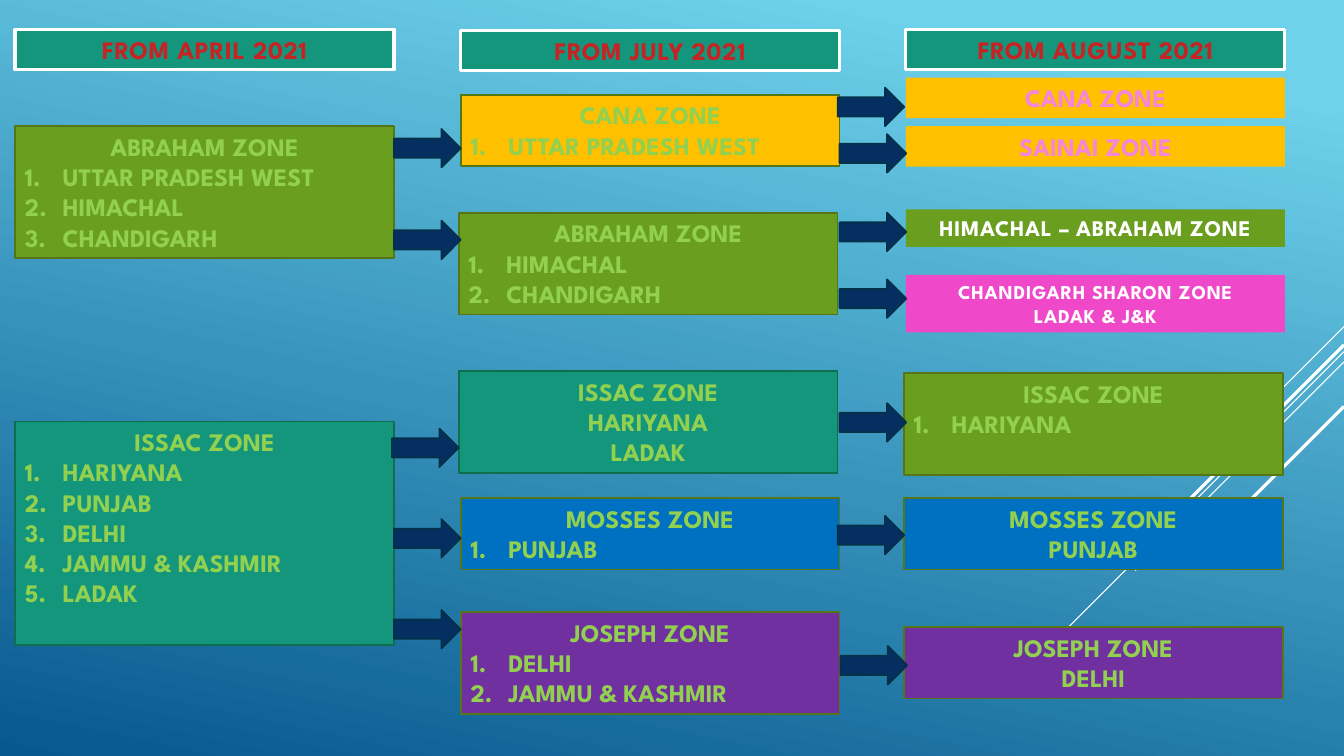
"""Build the slide that shows how the zones were split from April to August 2021."""
from lxml import etree
from pptx import Presentation
from pptx import util as u
from pptx.dml.color import RGBColor
from pptx.enum import shapes, text
from pptx.oxml import parse_xml
from pptx.oxml.ns import nsdecls, qn

FONT = "League Spartan"
SKY, OCEAN = RGBColor(0x6E, 0xD2, 0xEB), RGBColor(0x06, 0x58, 0x8E)
WHITE, OFF_WHITE = RGBColor(0xFF, 0xFF, 0xFF), RGBColor(0xFE, 0xFE, 0xFE)
GREEN, OLIVE = RGBColor(0x6A, 0x9E, 0x1F), RGBColor(0x56, 0x75, 0x17)
TEAL, PINE = RGBColor(0x14, 0x96, 0x7C), RGBColor(0x0F, 0x6F, 0x4C)
AMBER, BLUE = RGBColor(0xFF, 0xC0, 0x00), RGBColor(0x00, 0x70, 0xC0)
PURPLE, MAGENTA = RGBColor(0x70, 0x30, 0xA0), RGBColor(0xEF, 0x48, 0xC9)
NAVY, DARK_NAVY = RGBColor(0x05, 0x2F, 0x61), RGBColor(0x04, 0x31, 0x48)
LIME, PINK = RGBColor(0x92, 0xD0, 0x50), RGBColor(0xF5, 0x85, 0xDB)
RED = RGBColor(0xC6, 0x23, 0x24)

SLIDE_WIDTH, SLIDE_HEIGHT = 33.87, 19.05
BOX_WIDTH = 9.55
NUMBER_INDENT = 0.95
ARROW_WIDTH, ARROW_HEIGHT = 1.68, 0.97
TEXT_SHADOW = (
    f'<a:effectLst {nsdecls("a")}><a:outerShdw blurRad="38100" dist="22860" dir="5400000">'
    '<a:srgbClr val="000000"><a:alpha val="40000"/></a:srgbClr></a:outerShdw></a:effectLst>'
)

presentation = Presentation()
presentation.slide_width = u.Cm(SLIDE_WIDTH)
presentation.slide_height = u.Cm(SLIDE_HEIGHT)
slide = presentation.slides.add_slide(presentation.slide_layouts[6])

background = slide.background.fill
background.gradient()
background.gradient_angle = 258
for stop, position, color in zip(background.gradient_stops, (0.1, 1), (SKY, OCEAN)):
    stop.position = position
    stop.color.rgb = color

for top, reach, weight in [
    (8.23, 2.54, 0.75), (8.86, 8.28, 0.75), (9.12, 5.26, 0.75),
    (8.69, 4.85, 2.25), (10.24, 3.53, 2.25),
]:
    streak = slide.shapes.add_connector(
        shapes.MSO_CONNECTOR.STRAIGHT, u.Cm(SLIDE_WIDTH), u.Cm(top),
        u.Cm(SLIDE_WIDTH - reach), u.Cm(top + reach))
    streak.line.color.rgb = WHITE
    streak.line.width = u.Pt(weight)
    etree.SubElement(streak._element.spPr, qn("a:effectLst"))


def add_filled_shape(kind, left, top, width, height, fill, outline, weight=1.25):
    """Add a flat shape, without an outline when its colour is None."""
    shape = slide.shapes.add_shape(kind, u.Cm(left), u.Cm(top), u.Cm(width), u.Cm(height))
    shape.shadow.inherit = False
    shape.fill.solid()
    shape.fill.fore_color.rgb = fill
    if outline is None:
        shape.line.fill.background()
    else:
        shape.line.color.rgb = outline
        shape.line.width = u.Pt(weight)
    return shape


def add_box(left, top, height, fill, outline, centred, numbered=(),
            size=18, color=LIME, weight=1.25, shadowed=False):
    """Add a box with centred lines followed by numbered lines."""
    shape = add_filled_shape(shapes.MSO_SHAPE.RECTANGLE, left, top, BOX_WIDTH, height,
                             fill, outline, weight)
    frame = shape.text_frame
    frame.word_wrap = True
    frame.vertical_anchor = text.MSO_ANCHOR.TOP
    for index, line in enumerate([*centred, *numbered]):
        paragraph = frame.paragraphs[0] if index == 0 else frame.add_paragraph()
        paragraph.alignment = text.PP_ALIGN.CENTER
        if index >= len(centred):
            paragraph.alignment = text.PP_ALIGN.LEFT
            properties = paragraph._p.get_or_add_pPr()
            properties.set("marL", str(u.Cm(NUMBER_INDENT)))
            properties.set("indent", str(-u.Cm(NUMBER_INDENT)))
            etree.SubElement(properties, qn("a:buFont"), typeface="+mj-lt")
            etree.SubElement(properties, qn("a:buAutoNum"), type="arabicPeriod")
        run = paragraph.add_run()
        run.text = line
        run.font.name = FONT
        run.font.size = u.Pt(size)
        run.font.bold = True
        run.font.color.rgb = color
        if shadowed:
            properties = run._r.get_or_add_rPr()
            properties.set("spc", "50")
            properties.find(qn("a:solidFill")).addnext(parse_xml(TEXT_SHADOW))


for left, top, month in [(0.38, 0.74, "APRIL"), (11.61, 0.76, "JULY"), (22.83, 0.74, "AUGUST")]:
    add_box(left, top, 1.02, TEAL, WHITE, [f"FROM {month} 2021"],
            color=RED, weight=2.25, shadowed=True)

for left, top, height, fill, outline, centred, numbered in [
    (0.38, 3.18, 3.33, GREEN, OLIVE, ["ABRAHAM ZONE"],
     ["UTTAR PRADESH WEST", "HIMACHAL", "CHANDIGARH"]),
    (0.38, 10.62, 5.64, TEAL, PINE, ["ISSAC ZONE"],
     ["HARIYANA", "PUNJAB", "DELHI", "JAMMU & KASHMIR", "LADAK"]),
    (11.61, 2.39, 1.8, AMBER, OLIVE, ["CANA ZONE"], ["UTTAR PRADESH WEST"]),
    (11.56, 5.36, 2.57, GREEN, OLIVE, ["ABRAHAM ZONE"], ["HIMACHAL", "CHANDIGARH"]),
    (11.56, 9.35, 2.57, TEAL, PINE, ["ISSAC ZONE", "HARIYANA", "LADAK"], []),
    (11.61, 12.55, 1.8, BLUE, OLIVE, ["MOSSES ZONE"], ["PUNJAB"]),
    (11.61, 15.42, 2.57, PURPLE, OLIVE, ["JOSEPH ZONE"], ["DELHI", "JAMMU & KASHMIR"]),
    (22.78, 9.4, 2.57, GREEN, OLIVE, ["ISSAC ZONE"], ["HARIYANA"]),
    (22.78, 12.55, 1.8, BLUE, OLIVE, ["MOSSES ZONE", "PUNJAB"], []),
    (22.78, 15.8, 1.8, PURPLE, OLIVE, ["JOSEPH ZONE", "DELHI"], []),
]:
    add_box(left, top, height, fill, outline, centred, numbered)

for top, height, fill, lines, size, color, shadowed in [
    (1.96, 1.02, AMBER, ["CANA ZONE"], 18, PINK, False),
    (3.18, 1.02, AMBER, ["SAINAI ZONE"], 18, PINK, False),
    (5.28, 0.94, GREEN, ["HIMACHAL – ABRAHAM ZONE"], 16, OFF_WHITE, True),
    (6.93, 1.45, MAGENTA, ["CHANDIGARH SHARON ZONE", "LADAK & J&K"], 14, OFF_WHITE, True),
]:
    add_box(22.83, top, height, fill, None, lines, size=size, color=color, shadowed=shadowed)

for left, top in [
    (9.93, 3.25), (9.93, 5.56), (9.88, 10.8), (9.93, 13.08), (9.93, 15.37),
    (21.11, 2.21), (21.16, 3.38), (21.16, 5.36), (21.16, 7.04),
    (21.16, 10.16), (21.11, 13), (21.18, 16.28),
]:
    add_filled_shape(shapes.MSO_SHAPE.RIGHT_ARROW, left, top, ARROW_WIDTH, ARROW_HEIGHT,
                     NAVY, DARK_NAVY)

presentation.save("out.pptx")
